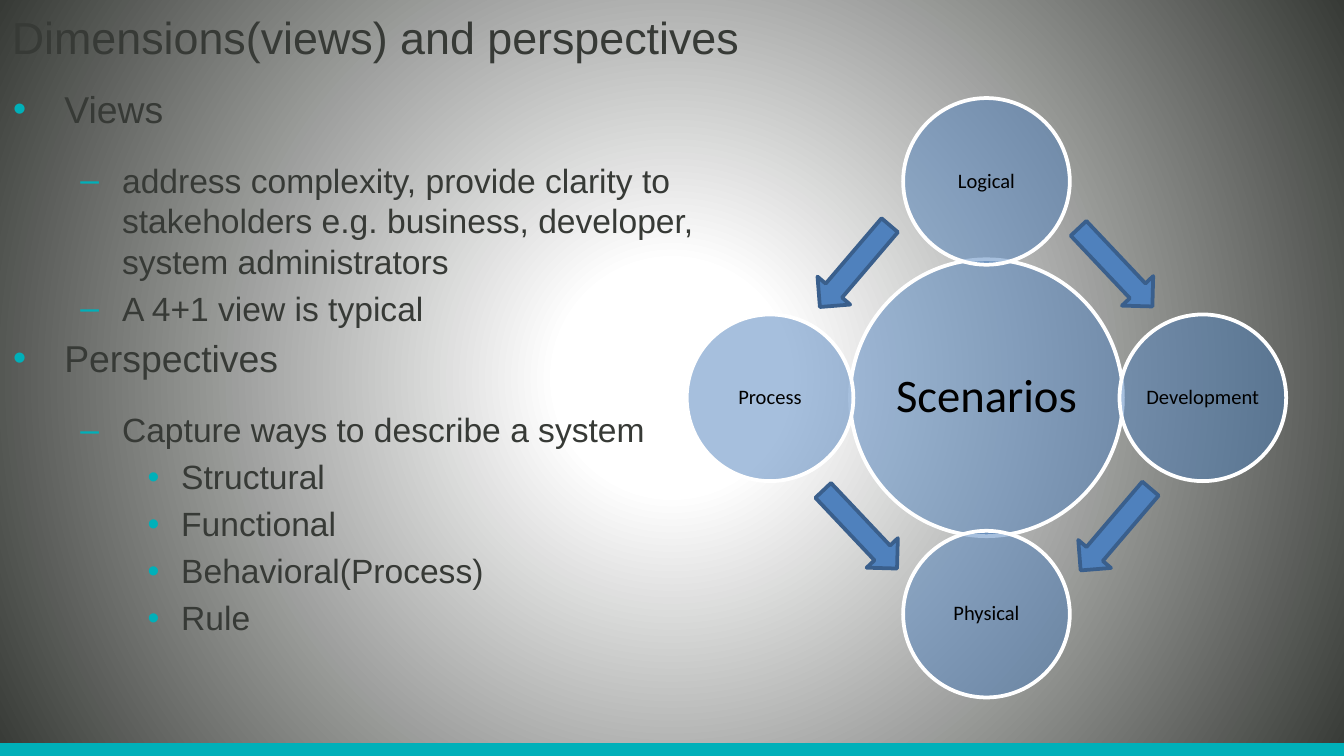
from lxml import etree
from pptx import Presentation
from pptx.dml.color import RGBColor
from pptx.enum.shapes import MSO_SHAPE
from pptx.enum.text import MSO_ANCHOR, PP_ALIGN
from pptx.oxml import parse_xml
from pptx.oxml.ns import nsdecls, qn
from pptx.util import Inches, Pt

RECTANGLE, OVAL, ARROW = MSO_SHAPE.RECTANGLE, MSO_SHAPE.OVAL, MSO_SHAPE.RIGHT_ARROW
MIDDLE, CENTER = MSO_ANCHOR.MIDDLE, PP_ALIGN.CENTER

COLORS = {
    "ink": "373A36",
    "accent": "00B0B9",
    "blue": "4F81BD",
    "arrow_edge": "3A5F8C",
    "white": "FFFFFF",
    "black": "000000",
}

LEVELS = [
    {"bullet": "•", "margin": 0.38, "hang": 0.38, "size": 20, "after": 12},
    {"bullet": "–", "margin": 0.81, "hang": 0.31, "size": 18, "after": 0},
    {"bullet": "•", "margin": 1.25, "hang": 0.25, "size": 18, "after": 0},
]

OUTLINE = [
    (0, "Views"),
    (1, "address complexity, provide clarity to stakeholders e.g. business, "
        "developer, system administrators"),
    (1, "A 4+1 view is typical"),
    (0, "Perspectives"),
    (1, "Capture ways to describe a system"),
    (2, "Structural"),
    (2, "Functional"),
    (2, "Behavioral(Process)"),
    (2, "Rule"),
]

HUB_X, HUB_Y, ORBIT = 7.34, 2.96, 1.61
VIEWS = [("Logical", 0, -1), ("Development", 1, 0), ("Physical", 0, 1), ("Process", -1, 0)]
FLOWS = [(8.3, 1.99, 46.6), (6.36, 1.98, 130.5), (6.4, 3.94, 46.6), (8.3, 3.94, 130.5)]


def rgb(name):
    """Return the named colour."""
    return RGBColor.from_string(COLORS[name])


def set_font(paragraph, face, size, color):
    """Set the font of a whole paragraph."""
    paragraph.font.name = face
    paragraph.font.size = Pt(size)
    paragraph.font.color.rgb = rgb(color)


def set_background(slide):
    """Give the slide a gradient that darkens outwards from its centre."""
    slide._element.cSld.insert(0, parse_xml(
        f'<p:bg {nsdecls("p", "a")}><p:bgPr><a:gradFill rotWithShape="1"><a:gsLst>'
        f'<a:gs pos="15000"><a:srgbClr val="{COLORS["white"]}"/></a:gs>'
        f'<a:gs pos="100000"><a:srgbClr val="{COLORS["ink"]}"/></a:gs></a:gsLst>'
        '<a:path path="circle">'
        '<a:fillToRect l="50000" t="50000" r="50000" b="50000"/></a:path>'
        '</a:gradFill><a:effectLst/></p:bgPr></p:bg>'))


def add_filled(slide, preset, center_x, center_y, width, height, fill, edge=None):
    """Add a filled shape around a centre point, with an optional outline."""
    shape = slide.shapes.add_shape(
        preset, Inches(center_x - width / 2), Inches(center_y - height / 2),
        Inches(width), Inches(height))
    shape.shadow.inherit = False
    shape.fill.solid()
    shape.fill.fore_color.rgb = rgb(fill)
    if edge:
        shape.line.color.rgb = rgb(edge)
        shape.line.width = Pt(2)
    else:
        shape.line.fill.background()
    return shape


def add_view(slide, label, center_x, center_y, width, height, size):
    """Add a half-transparent circle with its label."""
    view = add_filled(slide, OVAL, center_x, center_y, width, height, "blue", "white")
    tint = view._element.spPr.find(qn("a:solidFill")).find(qn("a:srgbClr"))
    etree.SubElement(tint, qn("a:alpha"), val="50000")
    frame = view.text_frame
    frame.margin_left = frame.margin_right = frame.margin_top = frame.margin_bottom = 0
    frame.vertical_anchor = MIDDLE
    frame.word_wrap = True
    paragraph = frame.paragraphs[0]
    paragraph.text = label
    paragraph.alignment = CENTER
    paragraph.line_spacing = 0.9
    set_font(paragraph, "Calibri", size, "black")


def add_text_frame(slide, left, top, width, height):
    """Add a wrapping text box and return its frame."""
    box = slide.shapes.add_textbox(Inches(left), Inches(top), Inches(width), Inches(height))
    box.text_frame.word_wrap = True
    return box.text_frame


def add_title(slide, title):
    """Add the slide title."""
    frame = add_text_frame(slide, -0.01, 0, 9, 0.54)
    frame.vertical_anchor = MIDDLE
    frame.paragraphs[0].text = title
    set_font(frame.paragraphs[0], "Arial", 24, "ink")


def set_bullet(paragraph, style):
    """Give a paragraph its hanging indent and coloured bullet."""
    properties = paragraph._p.get_or_add_pPr()
    properties.set("marL", str(Inches(style["margin"])))
    properties.set("indent", str(-Inches(style["hang"])))
    color = etree.SubElement(properties, qn("a:buClr"))
    etree.SubElement(color, qn("a:srgbClr"), val=COLORS["accent"])
    etree.SubElement(properties, qn("a:buFont"), typeface="Arial")
    etree.SubElement(properties, qn("a:buChar"), char=style["bullet"])


def add_outline(slide, outline):
    """Add the bulleted outline."""
    frame = add_text_frame(slide, 0, 0.59, 6.12, 4.95)
    for index, (level, wording) in enumerate(outline):
        style = LEVELS[level]
        paragraph = frame.add_paragraph() if index else frame.paragraphs[0]
        paragraph.text = wording
        paragraph.level = level
        set_bullet(paragraph, style)
        paragraph.space_before = Pt(0.2 * style["size"] if index else 0)
        paragraph.space_after = Pt(style["after"])
        set_font(paragraph, "Arial", style["size"], "ink")


def add_view_model(slide):
    """Add the scenarios hub, the four views around it and the arrows."""
    add_view(slide, "Scenarios", HUB_X, HUB_Y, 2.03, 2.06, 25)
    for label, across, down in VIEWS:
        add_view(slide, label, HUB_X + across * ORBIT, HUB_Y + down * ORBIT, 1.24, 1.24, 11)
    for center_x, center_y, angle in FLOWS:
        flow = add_filled(slide, ARROW, center_x, center_y, 0.8, 0.32, "blue", "arrow_edge")
        flow.rotation = angle


def main():
    """Build the slide and save it."""
    deck = Presentation()
    deck.slide_width = Inches(10)
    deck.slide_height = deck.slide_width * 9 // 16
    slide = deck.slides.add_slide(deck.slide_layouts[6])
    set_background(slide)
    add_filled(slide, RECTANGLE, 5.01, 5.59, 10.03, 0.12, "accent")
    add_title(slide, "Dimensions(views) and perspectives")
    add_outline(slide, OUTLINE)
    add_view_model(slide)
    deck.save("out.pptx")


if __name__ == "__main__":
    main()
